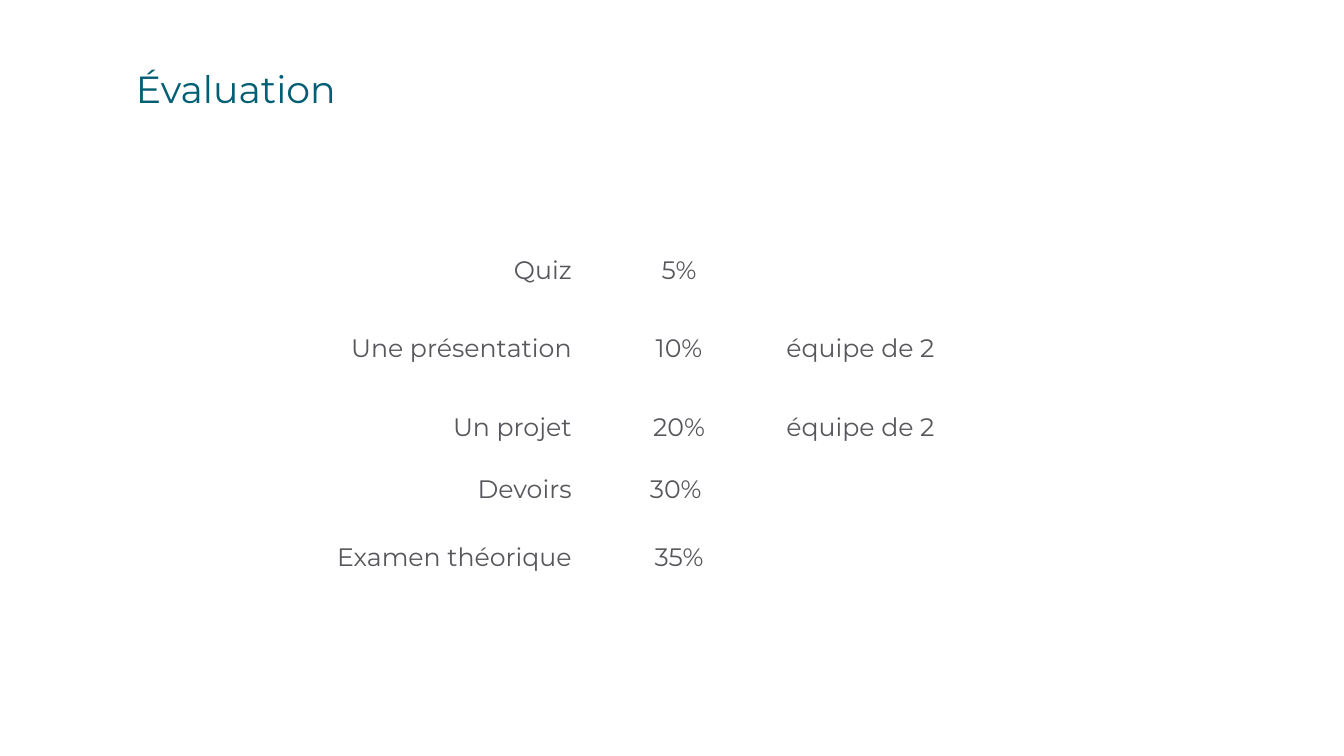
from pptx import Presentation
from pptx.dml.color import RGBColor as Rgb
from pptx.enum.text import MSO_ANCHOR as Anchor, PP_ALIGN as Align
from pptx.util import Inches, Pt

THEME = {
    "title": {"name": "Montserrat", "size": Pt(27), "color": "025E73"},
    "body": {"name": "Montserrat", "size": Pt(18), "color": "57565B"},
    "gap": Pt(22),
}
COLS = (3.17, 1.93, 2.55)
ROWS = (0.78, 0.78, 1.29, 0.78)
SIDES = (Align.RIGHT, Align.CENTER, Align.LEFT)
MARKS = (
    (["Quiz"], ["5%"], []),
    (["Une présentation"], ["10%"], ["équipe de 2"]),
    (["Un projet", "Devoirs"], ["20%", "30% "], ["équipe de 2"]),
    (["Examen théorique"], ["35%"], []),
)


def style(font, look):
    for key, value in look.items():
        if key == "color":
            font.color.rgb = Rgb.from_string(value)
        else:
            setattr(font, key, value)


def write(frame, lines, look, side):
    """Fill a text frame with one paragraph per line, spaced by the theme gap."""
    for num, line in enumerate(lines):
        para = frame.add_paragraph() if num else frame.paragraphs[0]
        para.alignment = side
        if num:
            para.space_before = THEME["gap"]
        run = para.add_run()
        run.text = line
        style(run.font, look)


deck = Presentation()
deck.slide_width, deck.slide_height = Inches(13.33), Inches(7.5)
slide = deck.slides.add_slide(deck.slide_layouts[6])

title = slide.shapes.add_textbox(Inches(1.25), Inches(0.65), Inches(11.5), Inches(0.75))
frame = title.text_frame
frame.word_wrap = True
frame.vertical_anchor = Anchor.TOP
write(frame, ["Évaluation"], THEME["title"], Align.LEFT)
frame.paragraphs[0].line_spacing = 0.9

table = slide.shapes.add_table(
    len(ROWS), len(COLS), Inches(2.6), Inches(2.48), Inches(sum(COLS)), Inches(sum(ROWS))
).table
for flag in ("first_row", "horz_banding"):
    setattr(table, flag, False)
for col, wide in zip(table.columns, COLS):
    col.width = Inches(wide)
for row, high, marks in zip(table.rows, ROWS, MARKS):
    row.height = Inches(high)
    for cell, lines, side in zip(row.cells, marks, SIDES):
        cell.fill.background()
        cell.vertical_anchor = Anchor.TOP
        write(cell.text_frame, lines, THEME["body"], side)

deck.save("out.pptx")
